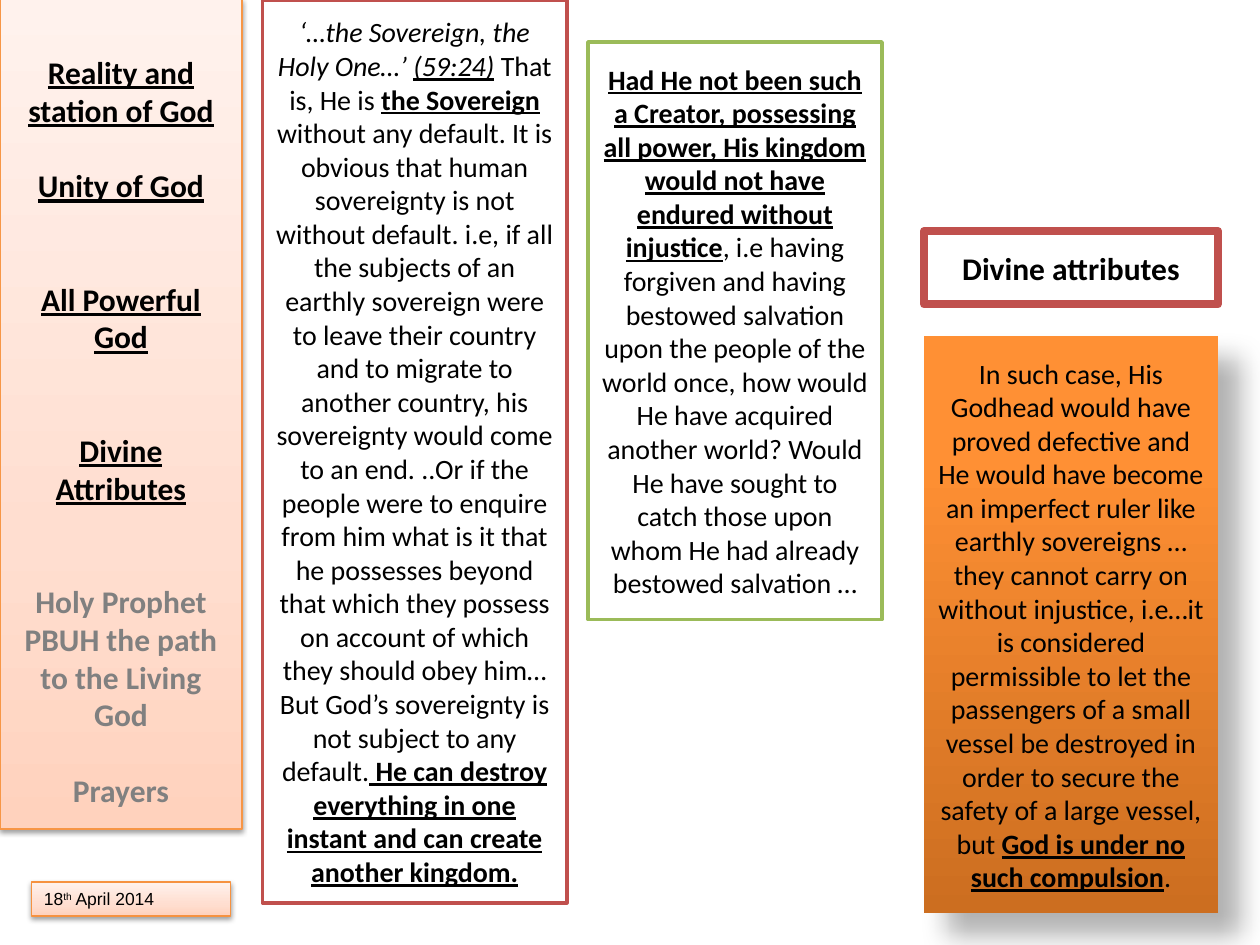
"""Build a slide on the sovereignty of God with a topic sidebar and three text panels."""
from copy import deepcopy

from lxml.etree import SubElement
from pptx import Presentation
from pptx.dml.color import RGBColor
from pptx.enum.shapes import MSO_SHAPE
from pptx.enum.text import MSO_ANCHOR, MSO_AUTO_SIZE, PP_ALIGN
from pptx.oxml.ns import qn
from pptx.util import Pt

BLACK = RGBColor(0x00, 0x00, 0x00)
WHITE = RGBColor(0xFF, 0xFF, 0xFF)
GRAY = RGBColor(0x80, 0x80, 0x80)
RED = RGBColor(0xC0, 0x50, 0x4D)
GREEN = RGBColor(0x9B, 0xBB, 0x59)
ORANGE = RGBColor(0xF7, 0x96, 0x46)
DATE_EDGE = RGBColor(0xF6, 0x92, 0x40)
PEACH = [(0, RGBColor(0xFF, 0xD2, 0xBD)), (0.35, RGBColor(0xFF, 0xDE, 0xD0)),
         (1, RGBColor(0xFF, 0xF2, 0xED))]
AMBER = [(0, RGBColor(0xCC, 0x6E, 0x20)), (0.8, RGBColor(0xFF, 0x90, 0x34)),
         (1, RGBColor(0xFF, 0x91, 0x36))]

SOFT = {"alpha": 38, "blur": 3.1, "dist": 1.6, "angle": 90}
DEEP = {"alpha": 30, "blur": 15, "dist": 18, "angle": 45}

PLAIN = {}
BOLD = {"bold": True}
ITALIC = {"italic": True}
ITALIC_LINE = {"italic": True, "underline": True}
STRONG = {"bold": True, "underline": True}

LINE = 21.6
TOPICS = [
    ("Reality and station of God", STRONG, BLACK, 0),
    ("Unity of God", STRONG, BLACK, 1),
    ("All Powerful God", STRONG, BLACK, 2),
    ("Divine Attributes", STRONG, BLACK, 2),
    ("Holy Prophet PBUH the path to the Living God", BOLD, GRAY, 2),
    ("Prayers", BOLD, GRAY, 1),
]

PANELS = [
    {"box": (336, 24, 168, 330), "fill": WHITE, "line": (GREEN, 2), "size": 16, "runs": [
        ("Had He not been such a Creator, possessing all power, His kingdom would not have "
         "endured without injustice", STRONG),
        (", i.e having forgiven and having bestowed salvation upon the people of the world "
         "once, how would He have acquired another world? Would He have sought to catch those "
         "upon whom He had already bestowed salvation …", PLAIN)]},
    {"box": (150, 0, 174, 516), "fill": WHITE, "line": (RED, 2), "size": 16, "runs": [
        ("‘…the Sovereign, the Holy One…’ ", ITALIC),
        ("(59:24)", ITALIC_LINE),
        (" ", ITALIC),
        ("That is, He is ", PLAIN),
        ("the Sovereign ", STRONG),
        ("without any default. It is obvious that human sovereignty is not without default. "
         "i.e, if all the subjects of an earthly sovereign were to leave their country and to "
         "migrate to another country, his sovereignty would come to an end. ..Or if the people "
         "were to enquire from him what is it that he possesses beyond that which they possess "
         "on account of which they should obey him…But God’s sovereignty is not subject to any "
         "default.", PLAIN),
        (" He can destroy everything in one instant and can create another kingdom.", STRONG)]},
    {"box": (528, 132, 168, 42), "fill": WHITE, "line": (RED, 4.5), "size": 18, "runs": [
        ("Divine attributes", BOLD)]},
    {"box": (528, 192, 168, 330), "fill": AMBER, "shadow": DEEP, "size": 16, "runs": [
        ("In such case, His Godhead would have proved defective and He would have become an "
         "imperfect ruler like earthly sovereigns …they cannot carry on without injustice, "
         "i.e…it is considered permissible to let the passengers of a small vessel be destroyed "
         "in order to secure the safety of a large vessel, but ", PLAIN),
        ("God is under no such compulsion", STRONG),
        (".", PLAIN)]},
]


def add_gradient(s, stops):
    s.fill.gradient()
    s.fill.gradient_angle = 90
    gs_list = s._element.spPr.find(qn("a:gradFill")).find(qn("a:gsLst"))
    gs_list.append(deepcopy(gs_list[-1]))
    for stop, (position, color) in zip(s.fill.gradient_stops, stops):
        stop.position = position
        stop.color.rgb = color


def add_shadow(s, alpha, blur, dist, angle):
    effects = s._element.spPr.find(qn("a:effectLst"))
    outer = SubElement(effects, qn("a:outerShdw"), blurRad=str(Pt(blur)), dist=str(Pt(dist)),
                       dir=str(angle * 60000), rotWithShape="0")
    color = SubElement(outer, qn("a:srgbClr"), val=str(BLACK))
    SubElement(color, qn("a:alpha"), val=str(alpha * 1000))


def add_box(slide, box, fill, line=None, shadow=None):
    s = slide.shapes.add_shape(MSO_SHAPE.RECTANGLE, *map(Pt, box))
    s.shadow.inherit = False
    if isinstance(fill, list):
        add_gradient(s, fill)
    else:
        s.fill.solid()
        s.fill.fore_color.rgb = fill
    if line:
        s.line.color.rgb, s.line.width = line[0], Pt(line[1])
    else:
        s.line.fill.background()
    if shadow:
        add_shadow(s, **shadow)
    s.text_frame.word_wrap = True
    s.text_frame.vertical_anchor = MSO_ANCHOR.MIDDLE
    return s


def add_run(p, text, size, style=PLAIN, color=BLACK, name="Calibri"):
    r = p.add_run()
    r.text = text
    r.font.color.rgb = color
    for key, value in {"name": name, "size": Pt(size), **style}.items():
        setattr(r.font, key, value)
    return r


def add_sidebar(slide):
    tf = add_box(slide, (0, -0.72, 138.24, 474.48), PEACH, (ORANGE, 0.75), SOFT).text_frame
    tf.margin_top = Pt(22.8)
    for i, (text, style, color, gap) in enumerate(TOPICS):
        p = tf.add_paragraph() if i else tf.paragraphs[0]
        p.alignment = PP_ALIGN.CENTER
        p.space_before = Pt(gap * LINE)
        add_run(p, text, 18, style, color)


def add_date(slide):
    tf = add_box(slide, (18, 504, 113.76, 19.44), PEACH, (DATE_EDGE, 0.75), SOFT).text_frame
    tf.word_wrap = False
    tf.auto_size = MSO_AUTO_SIZE.SHAPE_TO_FIT_TEXT
    tf.vertical_anchor = MSO_ANCHOR.TOP
    p = tf.paragraphs[0]
    p.alignment = PP_ALIGN.LEFT
    _, suffix, _ = [add_run(p, text, 10, name="Arial") for text in ("18", "th", " April 2014")]
    suffix._r.get_or_add_rPr().set("baseline", "30000")


def add_panel(slide, box, fill, size, runs, line=None, shadow=None):
    p = add_box(slide, box, fill, line, shadow).text_frame.paragraphs[0]
    p.alignment = PP_ALIGN.CENTER
    for text, style in runs:
        add_run(p, text, size, style)


def main():
    prs = Presentation()
    prs.slide_width, prs.slide_height = Pt(720), Pt(540)
    slide = prs.slides.add_slide(prs.slide_layouts[6])
    add_sidebar(slide)
    add_date(slide)
    for panel in PANELS:
        add_panel(slide, **panel)
    prs.save("out.pptx")


if __name__ == "__main__":
    main()
